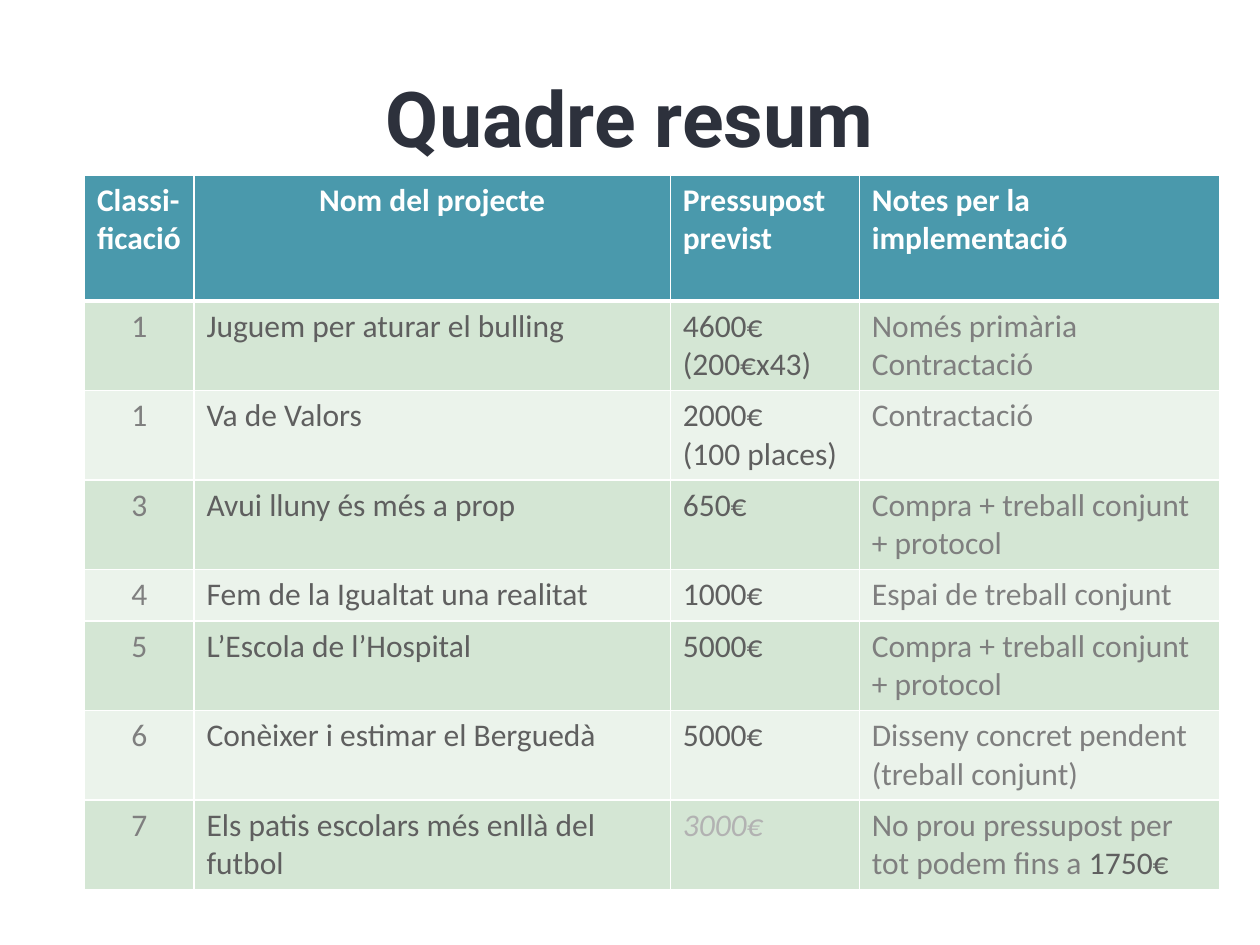
from lxml import etree
from pptx import Presentation
from pptx.dml.color import RGBColor
from pptx.enum.text import MSO_ANCHOR, PP_ALIGN
from pptx.oxml.ns import qn
from pptx.util import Inches, Pt

CENTER, LEFT = PP_ALIGN.CENTER, PP_ALIGN.LEFT
MIDDLE = MSO_ANCHOR.MIDDLE
COLORS = {
    "title": "2D313C", "header": "4A99AC", "white": "FFFFFF",
    "odd": "D4E6D4", "even": "EBF3EB",
    "dark": "5F5F5F", "gray": "7F7F7F", "pale": "B2B2B2",
}
HEADERS = ["Classi-ficació", "Nom del projecte", "Pressupost previst", "Notes per la implementació"]
PROJECTS = [
    ["1", "Juguem per aturar el bulling", "4600€ (200€x43)", "Només primària\nContractació"],
    ["1", "Va de Valors", "2000€\n(100 places)", "Contractació"],
    ["3", "Avui lluny és més a prop", "650€", "Compra + treball conjunt + protocol"],
    ["4", "Fem de la Igualtat una realitat", "1000€", "Espai de treball conjunt"],
    ["5", "L’Escola de l’Hospital", "5000€", "Compra + treball conjunt + protocol"],
    ["6", "Conèixer i estimar el Berguedà", "5000€", "Disseny concret pendent (treball conjunt)"],
    ["7", "Els patis escolars més enllà del futbol", "3000€", "No prou pressupost per tot podem fins a "],
]
COLUMN_WIDTHS = [0.87, 3.78, 1.5, 2.86]
ROW_HEIGHTS = [1, 0.71, 0.71, 0.71, 0.41, 0.71, 0.71, 0.71]
COLUMN_COLORS = ["gray", "dark", "dark", "gray"]


def add_span(para, text, size, font, color, bold=False):
    span = para.add_run()
    span.text = text
    span.font.size = Pt(size)
    span.font.name = font
    span.font.bold = bold
    span.font.color.rgb = RGBColor.from_string(COLORS[color])
    return span


def set_borders(cell, top, bottom):
    properties = cell._tc.get_or_add_tcPr()
    for side, width in (("L", 1), ("R", 1), ("T", top), ("B", bottom)):
        line = etree.SubElement(properties, qn(f"a:ln{side}"), w=str(Pt(width)))
        fill = etree.SubElement(line, qn("a:solidFill"))
        etree.SubElement(fill, qn("a:srgbClr"), val=COLORS["white"])


deck = Presentation()
deck.slide_width = Inches(10)
deck.slide_height = Inches(7.5)
page = deck.slides.add_slide(deck.slide_layouts[6])

title = page.shapes.add_textbox(Inches(0.5), Inches(0.3), Inches(9), Inches(1.25)).text_frame
title.word_wrap = True
title.vertical_anchor = MIDDLE
title.paragraphs[0].alignment = CENTER
add_span(title.paragraphs[0], "Quadre resum", 44, "Roboto", "title", True)

rows = [HEADERS] + PROJECTS
table = page.shapes.add_table(
    len(rows), len(HEADERS), Inches(0.67), Inches(1.39),
    Inches(sum(COLUMN_WIDTHS)), Inches(sum(ROW_HEIGHTS)),
).table
for column, width in zip(table.columns, COLUMN_WIDTHS):
    column.width = Inches(width)
for row, height in zip(table.rows, ROW_HEIGHTS):
    row.height = Inches(height)

for row_index, texts in enumerate(rows):
    is_header = row_index == 0
    row_fill = "header" if is_header else "odd" if row_index % 2 else "even"
    for column_index, text in enumerate(texts):
        cell = table.cell(row_index, column_index)
        set_borders(cell, 3 if row_index == 1 else 1, 3 if is_header else 1)
        cell.fill.solid()
        cell.fill.fore_color.rgb = RGBColor.from_string(COLORS[row_fill])
        centered = column_index == (1 if is_header else 0)
        color = "white" if is_header else COLUMN_COLORS[column_index]
        for line_index, line_text in enumerate(text.split("\n")):
            frame = cell.text_frame
            para = frame.add_paragraph() if line_index else frame.paragraphs[0]
            para.alignment = CENTER if centered else LEFT
            add_span(para, line_text, 18, "Calibri", color, is_header)

last_row = len(PROJECTS)
unfunded = table.cell(last_row, 2).text_frame.paragraphs[0].runs[0]
unfunded.font.italic = True
unfunded.font.color.rgb = RGBColor.from_string(COLORS["pale"])
add_span(table.cell(last_row, 3).text_frame.paragraphs[0], "1750€", 18, "Calibri", "dark")

deck.save("out.pptx")
